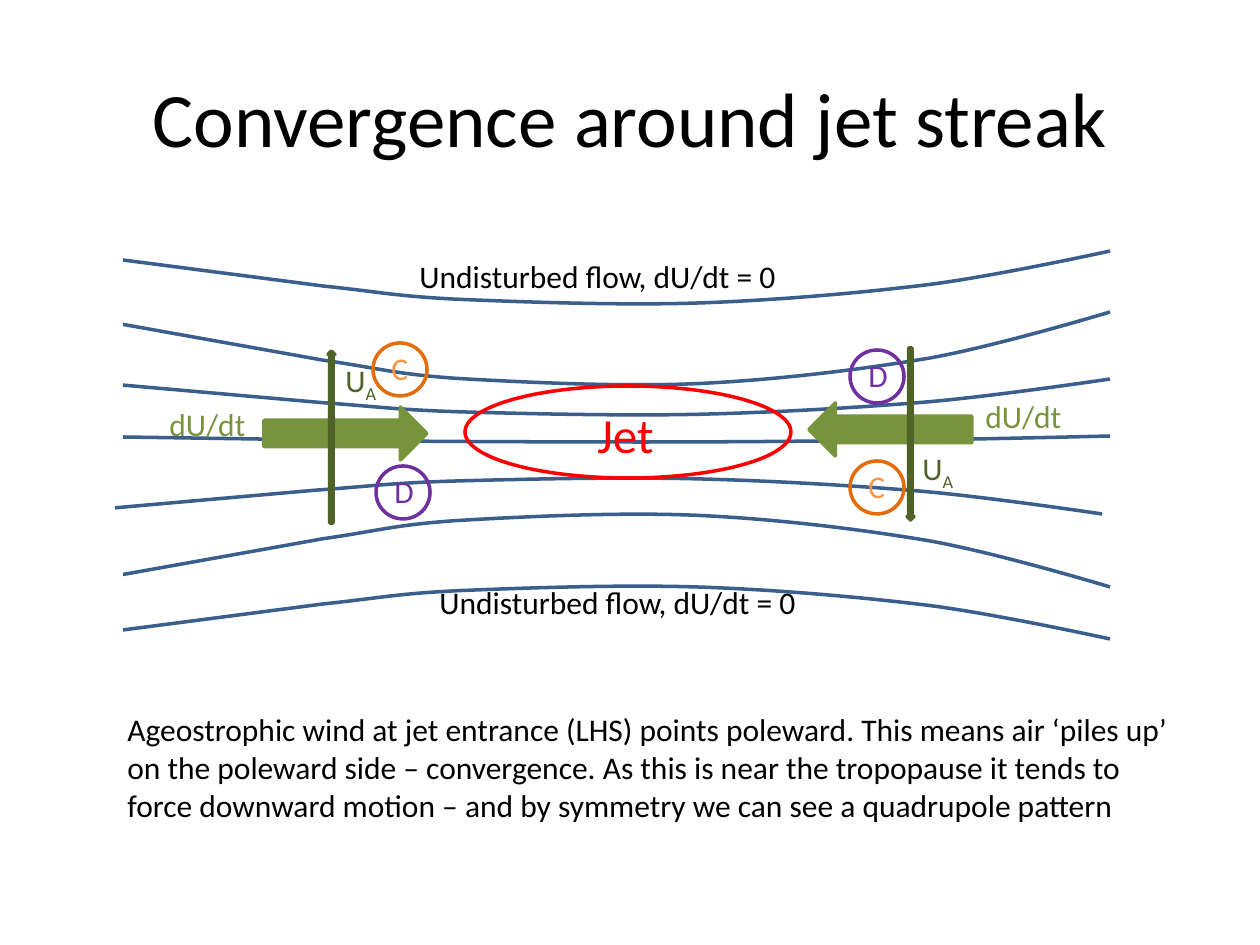
from lxml import etree
from pptx import Presentation
from pptx import util as u
from pptx.dml.color import RGBColor
from pptx.enum import shapes, text
from pptx.oxml.ns import qn

PX = 914400 / 126  # EMU in one px
BLACK, BLUE, RED = "000000", "3A5F8C", "FF0000"
GREEN, DARK = "77933C", "4F6228"
ORANGE, PEACH, PURPLE = "E46C0A", "F79646", "7030A0"
KIND = shapes.MSO_SHAPE

TITLE = "Convergence around jet streak"
NOTE = ("Ageostrophic wind at jet entrance (LHS) points poleward. This means air ‘piles up’ "
        "on the poleward side – convergence. As this is near the tropopause it tends to "
        "force downward motion – and by symmetry we can see a quadrupole pattern")
FLOW = "Undisturbed flow, dU/dt = 0"

# Streamline profile: x in px, y as a share of the height
START = (0, 0.17)
BEND = (200, 0.66)
CURVES = [
    [(256, 0.77), (271, 0.85), (334, 0.91)],
    [(397, 0.96), (497, 1.03), (576, 0.98)],
    [(654, 0.93), (738, 0.79), (807, 0.63)],
    [(876, 0.46), (987, 0), (987, 0)],
]
# left, top, height, mirrored
STREAMS = [
    (123, 312, 73, False), (123, 379, 36, False), (123, 436, 6, False),
    (123, 514, 73, True), (115, 478, 36, True), (123, 586, 53, True),
    (123, 251, 53, False),
]
# kind, box, colour
ARROWS = [
    (KIND.RIGHT_ARROW, (264, 407, 163, 53), GREEN),
    (KIND.LEFT_ARROW, (809, 403, 163, 53), GREEN),
    (KIND.UP_ARROW, (328, 351, 7, 172), DARK),
    (KIND.DOWN_ARROW, (907, 348, 7, 172), DARK),
]
# words, subscript, box, colour
LABELS = [
    ("dU/dt", "", (157, 399, 115, 51), GREEN),
    ("dU/dt", "", (973, 391, 115, 51), GREEN),
    (FLOW, "", (407, 251, 500, 51), BLACK),
    (FLOW, "", (427, 577, 500, 51), BLACK),
    ("U", "A", (333, 355, 63, 51), DARK),
    ("U", "A", (910, 443, 63, 51), DARK),
]
# letter, left, top, ring colour, letter colour
MARKS = [
    ("C", 373, 343, ORANGE, PEACH), ("C", 850, 461, ORANGE, PEACH),
    ("D", 376, 466, PURPLE, PURPLE), ("D", 850, 350, PURPLE, PURPLE),
]


def emu(n):
    return u.Emu(round(n * PX))


def rgb(code):
    return RGBColor.from_string(code)


def style(shape, line, fill=None):
    shape.shadow.inherit = False
    if fill:
        shape.fill.solid()
        shape.fill.fore_color.rgb = rgb(fill)
    else:
        shape.fill.background()
    shape.line.color.rgb = rgb(line)
    shape.line.width = u.Pt(2)


def draw(home, kind, box, line, fill=None):
    style(home.add_shape(kind, *map(emu, box)), line, fill)


def write(home, words, box, size=18, color=BLACK, sub="", center=False, middle=False):
    frame = home.add_textbox(*map(emu, box)).text_frame
    frame.word_wrap = True
    if middle:
        frame.vertical_anchor = text.MSO_ANCHOR.MIDDLE
    para = frame.paragraphs[0]
    if center:
        para.alignment = text.PP_ALIGN.CENTER
    for part in filter(None, (words, sub)):
        run = para.add_run()
        run.text = part
        run.font.size = u.Pt(size)
        run.font.name = "Calibri"
        run.font.color.rgb = rgb(color)
    if sub:
        run.font._element.set("baseline", "-25000")


def stream(home, left, top, high, flip):
    def spot(point):
        x, y = point
        return emu(left + x), emu(top + high * (1 - y if flip else y))

    ends = [spot(BEND)] + [spot(c[-1]) for c in CURVES]
    first = spot(START)
    form = home.build_freeform(*first)
    form.add_line_segments(ends, close=False)
    shape = form.convert_to_shape()
    style(shape, BLUE)
    # Turn every segment after the bend into a cubic curve
    low_x, low_y = (min(v) for v in zip(first, *ends))
    lines = list(shape._element.iter(qn("a:lnTo")))
    for seg, curve in zip(lines[1:], CURVES):
        cubic = etree.Element(qn("a:cubicBezTo"))
        for x, y in map(spot, curve):
            etree.SubElement(cubic, qn("a:pt"), x=str(x - low_x), y=str(y - low_y))
        seg.getparent().replace(seg, cubic)


def main():
    deck = Presentation()
    deck.slide_width, deck.slide_height = emu(1260), emu(945)
    page = deck.slides.add_slide(deck.slide_layouts[6]).shapes
    write(page, TITLE, (63, 38, 1134, 158), size=44, center=True, middle=True)

    # Diagram
    art = page.add_group_shape().shapes
    for item in STREAMS:
        stream(art, *item)
    draw(art, KIND.OVAL, (465, 386, 326, 92), RED)
    write(art, "Jet", (585, 398, 87, 72), size=28, color=RED)
    for kind, box, color in ARROWS:
        draw(art, kind, box, color, color)
    for words, sub, box, color in LABELS:
        write(art, words, box, color=color, sub=sub)
    for words, left, top, ring, color in MARKS:
        draw(art, KIND.OVAL, (left, top, 54, 53), ring)
        write(art, words, (left + 6, top, 64, 51), color=color)

    # Explanation
    write(page, NOTE, (115, 704, 1082, 127))
    deck.save("out.pptx")


if __name__ == "__main__":
    main()
